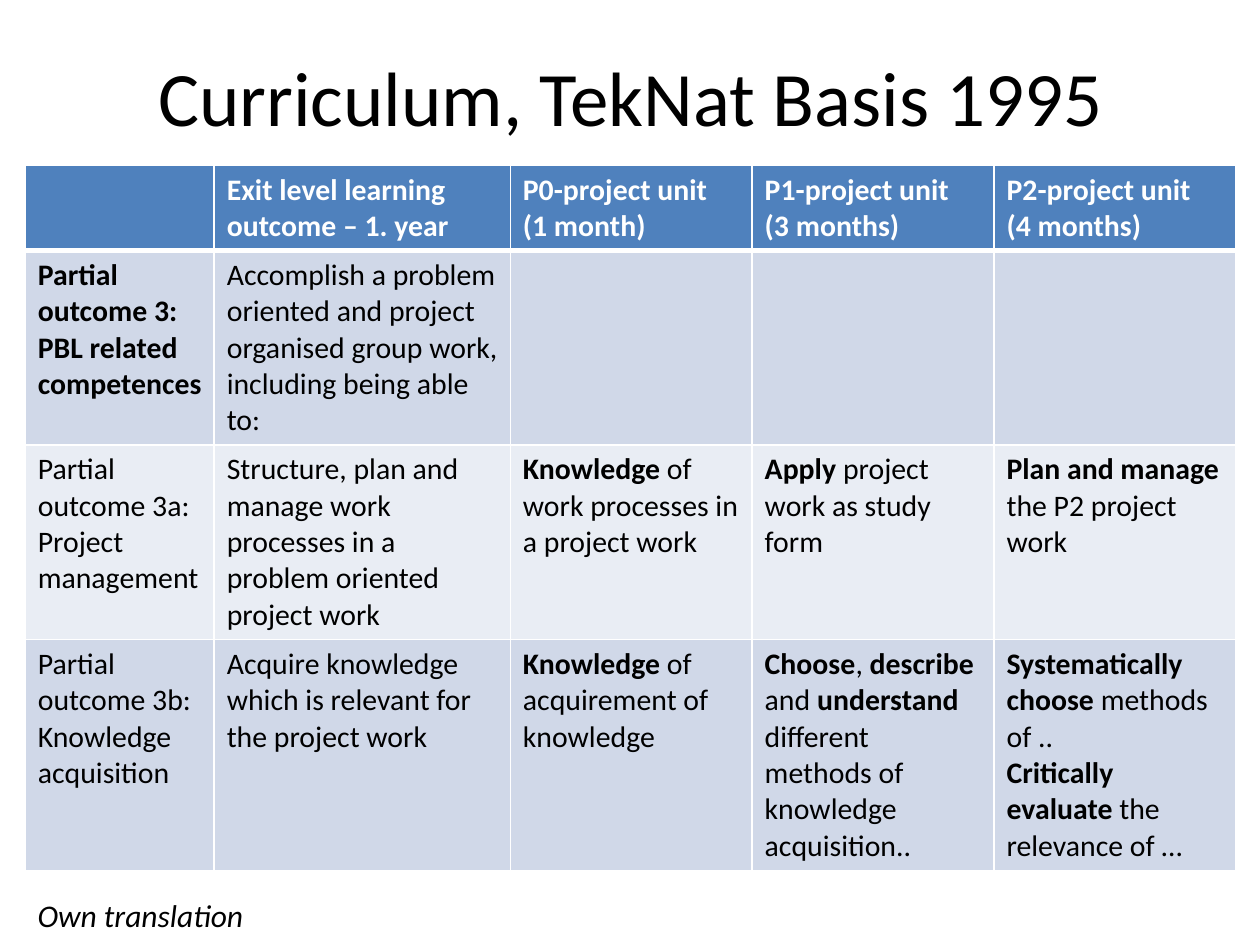
"""Build a curriculum slide with a title, an outcome table and a source note."""
from lxml import etree
from pptx import Presentation
from pptx.dml.color import RGBColor
from pptx.enum import text as t
from pptx.oxml.ns import qn
from pptx.util import Pt

TITLE = "Curriculum, TekNat Basis 1995"
NOTE = "Own translation"
ROWS = [
    ["", "*Exit level learning outcome – 1. year*", "*P0-project unit\v(1 month)*",
     "*P1-project unit\v(3 months)*", "*P2-project unit\v(4 months)*"],
    ["*Partial outcome 3: PBL related competences*",
     "Accomplish a problem oriented and project organised group work, "
     "including being able to:", "", "", ""],
    ["Partial outcome 3a: Project management",
     "Structure, plan and manage work processes in a problem oriented project work",
     "*Knowledge* of work processes in a project work",
     "*Apply *project work as study form",
     "*Plan and manage* the P2 project work"],
    ["Partial outcome 3b: Knowledge acquisition",
     "Acquire knowledge which is relevant for the project work",
     "*Knowledge* of acquirement of knowledge",
     "*Choose*, *describe* and *understand *different methods of knowledge acquisition..",
     "*Systematically choose *methods of ..\n*Critically evaluate* the relevance of …"],
]
THEME = {
    "font": "Calibri", "ink": "000000", "white": "FFFFFF", "head": "4F81BD",
    "bands": ["D0D8E8", "E9EDF4"], "title": 44, "cell": 17, "note": 18,
    "thin": 1, "thick": 3,
}
SLIDE = (720, 540)
BOX = {"title": (36.7, 9.4, 648, 90), "table": (14.4, 94.5, 691.8, 396),
       "note": (14.4, 508.3, 147.6, 28.8)}
COLS = [108, 169.2, 138.2, 138.2, 138.2]
ROW = 29.5


def style(font, size, color, **more):
    form = {"name": THEME["font"], "size": Pt(size), **more}
    for key, val in form.items():
        setattr(font, key, val)
    font.color.rgb = RGBColor.from_string(color)


def place(shape, box):
    for key, val in zip(("left", "top", "width", "height"), box):
        setattr(shape, key, Pt(val))


def write(frame, words, size, color, **more):
    for n, line in enumerate(words.split("\n")):
        para = frame.add_paragraph() if n else frame.paragraphs[0]
        for i, part in enumerate(line.split("*")):
            for j, bit in enumerate(part.split("\v")):
                if j:
                    para.add_line_break()
                if bit:
                    run = para.add_run()
                    run.text = bit
                    style(run.font, size, color, bold=i % 2 == 1, **more)


def border(cell, row):
    props = cell._tc.get_or_add_tcPr()
    for i, side in enumerate("LRTB"):
        heavy = (row, side) in ((0, "B"), (1, "T"))
        width = THEME["thick" if heavy else "thin"]
        line = etree.Element(qn("a:ln" + side), w=str(Pt(width)))
        fill = etree.SubElement(line, qn("a:solidFill"))
        etree.SubElement(fill, qn("a:srgbClr"), val=THEME["white"])
        props.insert(i, line)


def grid(slide):
    frame = slide.shapes.add_table(len(ROWS), len(COLS), *map(Pt, BOX["table"]))
    table = frame.table
    for col, width in zip(table.columns, COLS):
        col.width = Pt(width)
    for r, words in enumerate(ROWS):
        table.rows[r].height = Pt(ROW)
        back = THEME["bands"][(r - 1) % 2] if r else THEME["head"]
        ink = THEME["ink" if r else "white"]
        for c, word in enumerate(words):
            cell = table.cell(r, c)
            cell.fill.solid()
            cell.fill.fore_color.rgb = RGBColor.from_string(back)
            border(cell, r)
            write(cell.text_frame, word, THEME["cell"], ink)
    place(frame, BOX["table"])


def main():
    deck = Presentation()
    deck.slide_width, deck.slide_height = map(Pt, SLIDE)
    slide = deck.slides.add_slide(deck.slide_layouts[5])

    title = slide.shapes.title
    place(title, BOX["title"])
    title.text_frame.vertical_anchor = t.MSO_ANCHOR.MIDDLE
    write(title.text_frame, TITLE, THEME["title"], THEME["ink"])
    title.text_frame.paragraphs[0].alignment = t.PP_ALIGN.CENTER

    grid(slide)

    note = slide.shapes.add_textbox(*map(Pt, BOX["note"])).text_frame
    note.word_wrap = True
    note.auto_size = t.MSO_AUTO_SIZE.SHAPE_TO_FIT_TEXT
    write(note, NOTE, THEME["note"], THEME["ink"], italic=True)
    deck.save("out.pptx")


if __name__ == "__main__":
    main()
